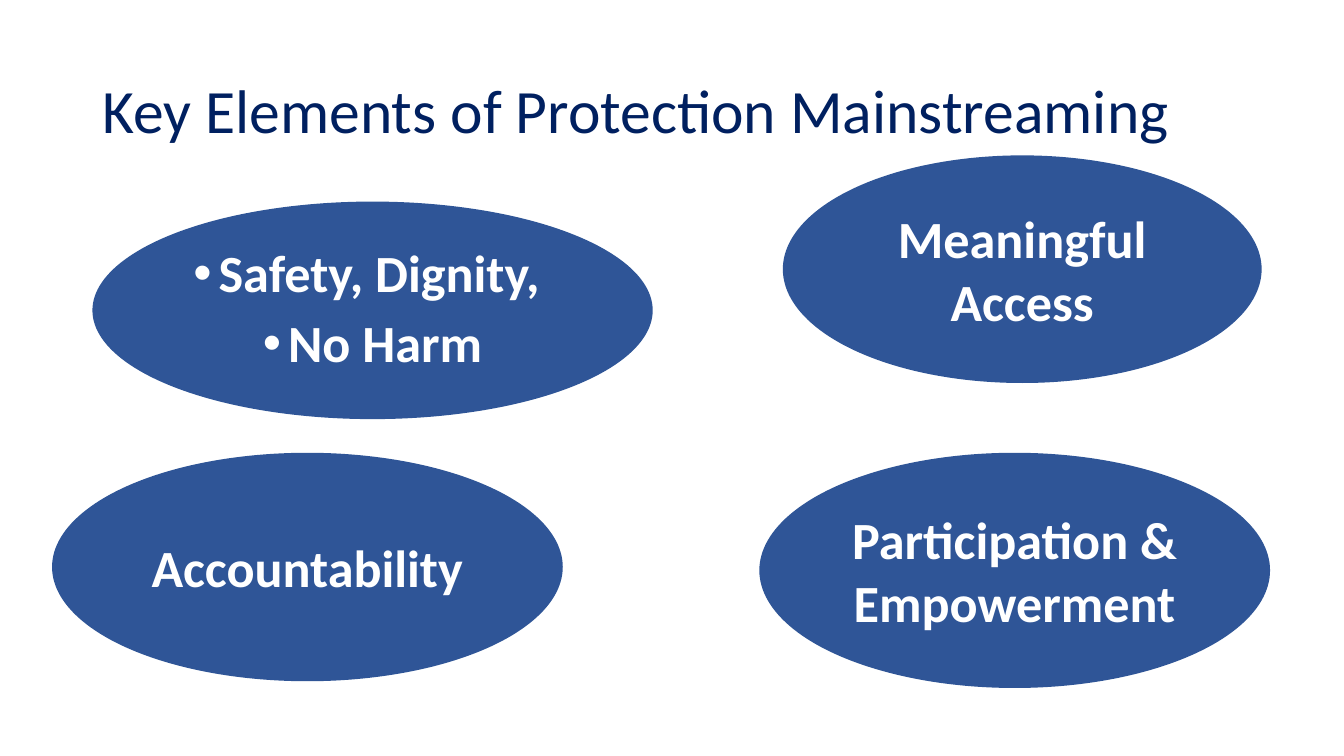
from dataclasses import dataclass

from lxml.etree import SubElement
from pptx import Presentation
from pptx.dml.color import RGBColor as RGB
from pptx.enum.shapes import MSO_SHAPE as Shape
from pptx.enum.text import MSO_ANCHOR as Anchor, MSO_AUTO_SIZE as AutoSize, PP_ALIGN as Align
from pptx.oxml.ns import qn
from pptx.slide import Slide
from pptx.text.text import TextFrame
from pptx.util import Emu, Inches, Pt


@dataclass(frozen=True)
class Theme:
    font: str = "Calibri"
    title_size: float = 44
    body_size: float = 37.3
    title: RGB = RGB(0x00, 0x20, 0x60)
    oval: RGB = RGB(0x2F, 0x55, 0x97)
    oval_text: RGB = RGB(0xFF, 0xFF, 0xFF)


@dataclass(frozen=True)
class Box:
    col: float
    row: float
    cols: float
    rows: float


@dataclass(frozen=True)
class Element:
    box: Box
    lines: tuple[str, ...]
    bulleted: bool = False


THEME = Theme()
WIDTH, HEIGHT = Inches(13.33), Inches(7.5)
COLUMNS, ROWS = 160, 90
TITLE_BOX = Box(11, 4.8, 138, 17.4)
ELEMENTS = (
    Element(Box(11, 24, 66.7, 25.9), ("Safety, Dignity, ", "No Harm"), bulleted=True),
    Element(Box(93.2, 18.5, 57, 27.1), ("Meaningful Access",)),
    Element(Box(6.2, 53.9, 60.8, 27.2), ("Accountability",)),
    Element(Box(90.4, 53.9, 60.8, 28), ("Participation & Empowerment",)),
)


def place(box: Box) -> tuple[Emu, Emu, Emu, Emu]:
    """Turn grid columns and rows into left, top, width and height."""
    col, row = WIDTH / COLUMNS, HEIGHT / ROWS
    return Emu(int(box.col * col)), Emu(int(box.row * row)), Emu(int(box.cols * col)), Emu(int(box.rows * row))


def write(tf: TextFrame, lines: tuple[str, ...], *, size: float, color: RGB, bold: bool = False,
          align: Align = Align.CENTER, spacing: float = 1.0, bulleted: bool = False) -> None:
    """Fill a text frame with formatted paragraphs."""
    tf.word_wrap = True
    tf.auto_size = AutoSize.NONE
    tf.vertical_anchor = Anchor.MIDDLE
    for i, line in enumerate(lines):
        p = tf.add_paragraph() if i else tf.paragraphs[0]
        p.alignment = align
        p.line_spacing = spacing
        if bulleted:
            p.space_before = Pt(10)
            pPr = p._p.get_or_add_pPr()
            pPr.set("marL", str(Inches(0.25)))
            pPr.set("indent", str(Inches(-0.25)))
            SubElement(pPr, qn("a:buFont")).set("typeface", "Arial")
            SubElement(pPr, qn("a:buChar")).set("char", "•")
        r = p.add_run()
        r.text = line
        r.font.name = THEME.font
        r.font.size = Pt(size)
        r.font.bold = bold
        r.font.color.rgb = color


def add_title(s: Slide, text: str) -> None:
    """Move and format the title placeholder."""
    sp = s.shapes.title
    sp.left, sp.top, sp.width, sp.height = place(TITLE_BOX)
    write(sp.text_frame, (text,), size=THEME.title_size, color=THEME.title, align=Align.LEFT, spacing=0.9)


def add_oval(s: Slide, element: Element) -> None:
    """Draw one key element as a filled ellipse."""
    sp = s.shapes.add_shape(Shape.OVAL, *place(element.box))
    sp.shadow.inherit = False
    sp.fill.solid()
    sp.fill.fore_color.rgb = THEME.oval
    sp.line.fill.background()
    write(sp.text_frame, element.lines, size=THEME.body_size, color=THEME.oval_text, bold=True,
          spacing=0.9 if element.bulleted else 1.0, bulleted=element.bulleted)


def main() -> None:
    """Build and save the slide."""
    prs = Presentation()
    prs.slide_width, prs.slide_height = WIDTH, HEIGHT
    s = prs.slides.add_slide(prs.slide_layouts.get_by_name("Title Only"))
    add_title(s, "Key Elements of Protection Mainstreaming")
    for element in ELEMENTS:
        add_oval(s, element)
    prs.save("out.pptx")


if __name__ == "__main__":
    main()
